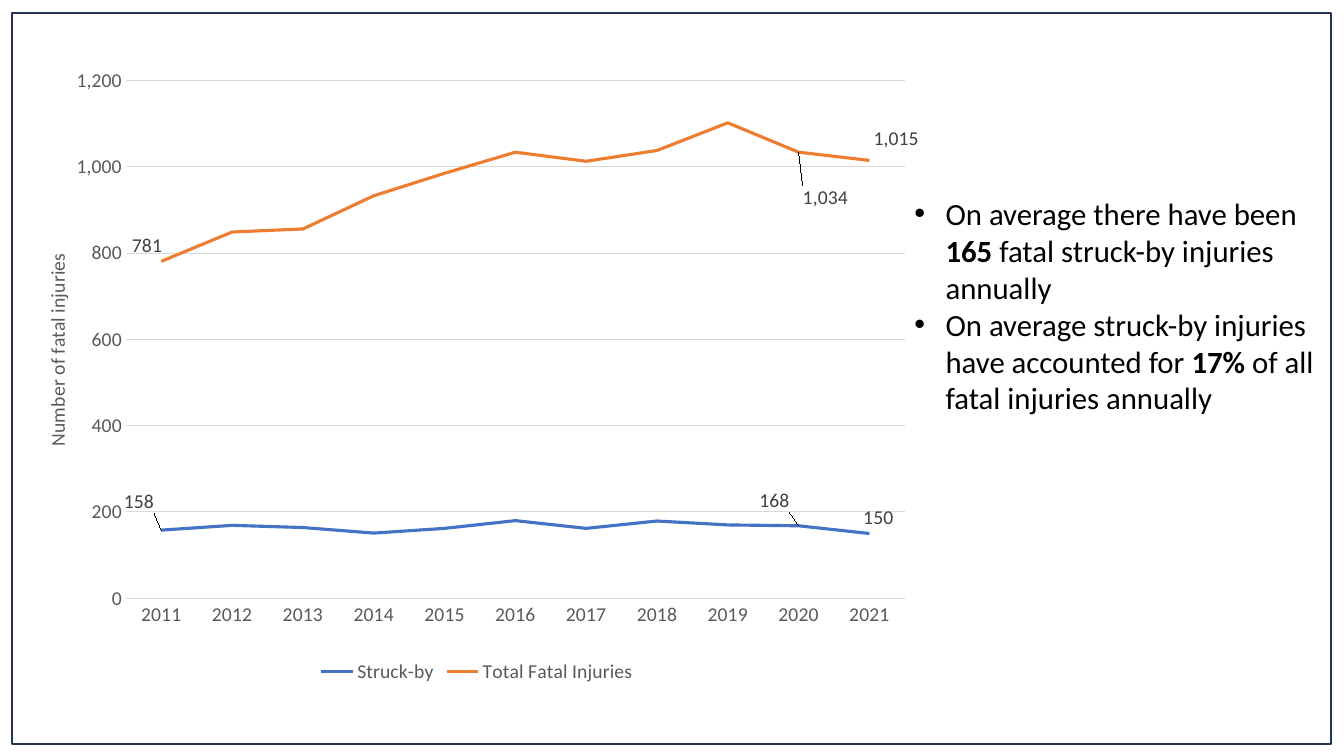
import pptx
import pptx.util
import pptx.chart.data
import pptx.dml.color
import pptx.enum.chart
import pptx.enum.shapes
import lxml.etree

# Content
YEARS = [str(year) for year in range(2011, 2022)]
INJURIES = {
    "Struck-by": ("4472C4", [158, 169, 164, 151, 162, 180, 162, 179, 170, 168, 150]),
    "Total Fatal Injuries": ("ED7D31", [781, 849, 856, 933, 985, 1034, 1013, 1038, 1102, 1034, 1015]),
}
# Labelled points: index -> shift from above the point, as shares of the chart
LABEL_SHIFTS = {
    "Struck-by": {0: (-0.025, -0.02), 9: (-0.027, -0.015), 10: (0.01, 0.0)},
    "Total Fatal Injuries": {0: (-0.016, 0.0), 9: (0.03, 0.1), 10: (0.03, -0.01)},
}
AXIS_TITLE = "Number of fatal injuries"
FINDINGS = [
    [("On average there have been ", False), ("165", True), (" fatal struck-by injuries annually", False)],
    [("On average struck-by injuries have accounted for ", False), ("17%", True),
     (" of all fatal injuries annually", False)],
]
PLOT_AREA = {"x": 0.108, "y": 0.019, "w": 0.87, "h": 0.837}
TITLE_PLACE = {"x": 0.012, "y": 0.293}
FONT, GREY, GRID = "Calibri", "595959", "D9D9D9"
INDENT = 0.31

Inches, Pt = pptx.util.Inches, pptx.util.Pt


def color(hex_code):
    return pptx.dml.color.RGBColor.from_string(hex_code)


def style(font, size=14, fill=GREY, bold=False):
    font.name, font.size, font.bold = FONT, Pt(size), bold
    font.color.rgb = color(fill)


def add_text(paragraph, text, **text_format):
    run = paragraph.add_run()
    run.text = text
    style(run.font, **text_format)


def set_line(line, hex_code, width):
    line.color.rgb = color(hex_code)
    line.width = Pt(width)


def chart_layout(places, inner=False):
    """Build a manual chart layout from shares of the chart's size."""
    space = "{http://schemas.openxmlformats.org/drawingml/2006/chart}"
    layout = pptx.oxml.parse_xml(
        f'<c:layout xmlns:c="{space[1:-1]}"><c:manualLayout/></c:layout>')
    settings = {"layoutTarget": "inner"} if inner else {}
    if inner or places is TITLE_PLACE:
        settings.update(xMode="edge", yMode="edge")
    settings.update(places)
    for tag, value in settings.items():
        lxml.etree.SubElement(layout[0], space + tag).set("val", str(value))
    return layout


presentation = pptx.Presentation()
presentation.slide_width, presentation.slide_height = Inches(13.33), Inches(7.5)
slide = presentation.slides.add_slide(presentation.slide_layouts[6])

# Slide border
border = slide.shapes.add_shape(pptx.enum.shapes.MSO_SHAPE.RECTANGLE,
                                Inches(0.12), Inches(0.13), Inches(13.08), Inches(7.25))
border.shadow.inherit = False
border.fill.background()
set_line(border.line, "24325B", 1)

# Injury chart
injury_data = pptx.chart.data.CategoryChartData(number_format="#,##0")
injury_data.categories = YEARS
for name, (_, counts) in INJURIES.items():
    injury_data.add_series(name, counts)
chart = slide.shapes.add_chart(pptx.enum.chart.XL_CHART_TYPE.LINE, Inches(0.29), Inches(0.68),
                               Inches(8.88), Inches(6.14), injury_data).chart
chart.has_title = False
style(chart.font, fill="000000")
chart.has_legend = True
chart.legend.position = pptx.enum.chart.XL_LEGEND_POSITION.BOTTOM
chart.legend.include_in_layout = False
style(chart.legend.font)
plot_area = chart._chartSpace.chart.plotArea
for old_layout in plot_area.xpath("c:layout"):
    plot_area.remove(old_layout)
plot_area.insert(0, chart_layout(PLOT_AREA, inner=True))

# Axes
years_axis, count_axis = chart.category_axis, chart.value_axis
for axis in (years_axis, count_axis):
    axis.major_tick_mark = axis.minor_tick_mark = pptx.enum.chart.XL_TICK_MARK.NONE
    style(axis.tick_labels.font)
set_line(years_axis.format.line, GRID, 0.75)
count_axis.format.line.fill.background()
count_axis.minimum_scale, count_axis.maximum_scale, count_axis.major_unit = 0, 1200, 200
count_axis.tick_labels.number_format = "#,##0"
count_axis.tick_labels.number_format_is_linked = False
set_line(count_axis.major_gridlines.format.line, GRID, 0.75)
axis_title = count_axis.axis_title
add_text(axis_title.text_frame.paragraphs[0], AXIS_TITLE)
axis_title.text_frame._txBody.bodyPr.set("rot", "-5400000")
axis_title.text_frame._txBody.bodyPr.set("vert", "horz")
for old_layout in axis_title._element.xpath("c:layout"):
    axis_title._element.remove(old_layout)
axis_title._element.xpath("c:tx")[0].addnext(chart_layout(TITLE_PLACE))

# Lines and their point labels
chart.plots[0].vary_by_categories = False
for series in chart.plots[0].series:
    series.smooth = False
    series.marker.style = pptx.enum.chart.XL_MARKER_STYLE.NONE
    set_line(series.format.line, INJURIES[series.name][0], 2.25)
    series.data_labels.show_value = False
    style(series.data_labels.font, fill="404040")
    for leader in series._element.xpath("c:dLbls/c:showLeaderLines"):
        leader.getparent().remove(leader)
    for index, (x, y) in LABEL_SHIFTS[series.name].items():
        label = series.points[index].data_label
        style(label.font, fill="404040")
        label.position = pptx.enum.chart.XL_LABEL_POSITION.ABOVE
        mark = series._element.xpath(f"c:dLbls/c:dLbl/c:idx[@val='{index}']")[0]
        mark.addnext(chart_layout({"x": x, "y": y}))

# Findings
findings = slide.shapes.add_textbox(Inches(8.97), Inches(1.88), Inches(4.19), Inches(2.32)).text_frame
findings.word_wrap = True
for number, finding in enumerate(FINDINGS):
    paragraph = findings.add_paragraph() if number else findings.paragraphs[0]
    properties = paragraph._p.get_or_add_pPr()
    properties.set("marL", str(Inches(INDENT)))
    properties.set("indent", str(-Inches(INDENT)))
    for tag, key, value in (("buFont", "typeface", "Arial"), ("buChar", "char", "•")):
        bullet = lxml.etree.SubElement(properties, pptx.oxml.ns.qn("a:" + tag))
        bullet.set(key, value)
    for text, bold in finding:
        add_text(paragraph, text, size=22, fill="000000", bold=bold)

presentation.save("out.pptx")
